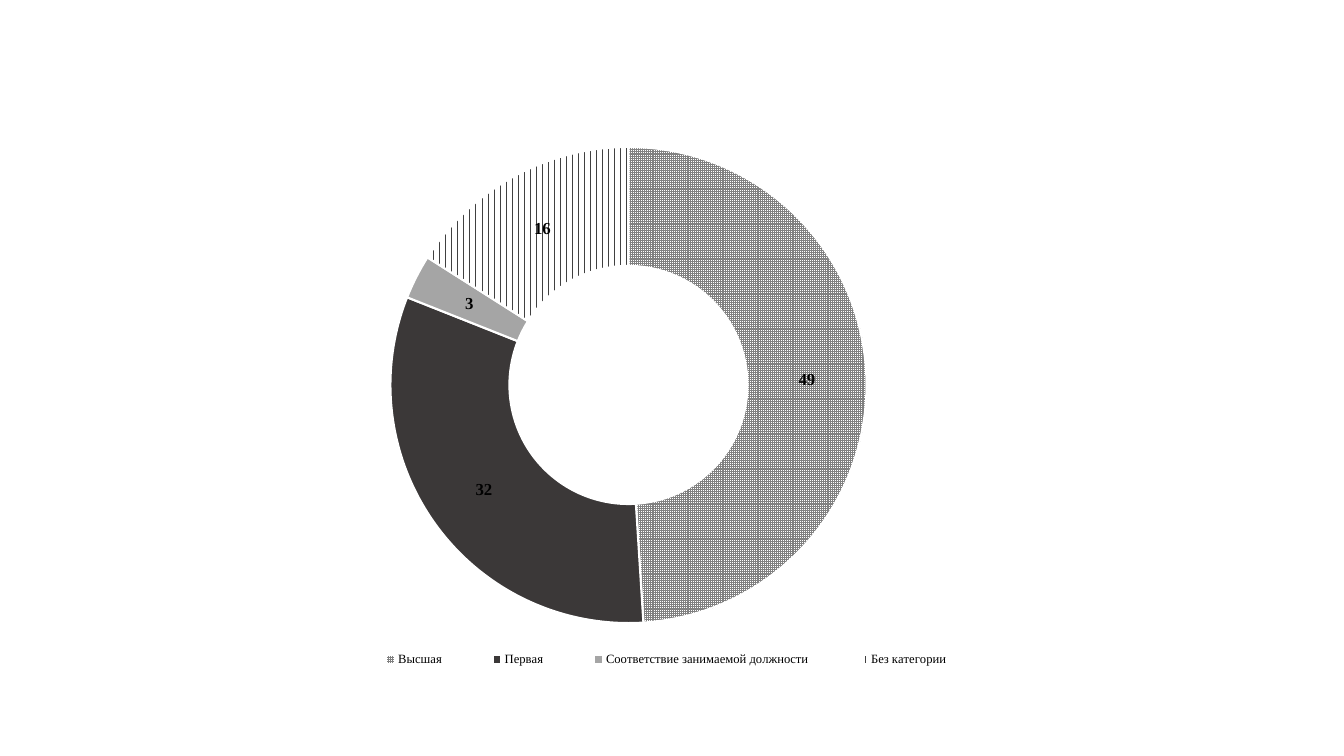
from dataclasses import dataclass
from typing import Optional

from lxml import etree
from pptx import Presentation
from pptx import util as u
from pptx.chart.data import CategoryChartData
from pptx.dml.color import RGBColor
from pptx.enum import chart as ch
from pptx.enum.dml import MSO_PATTERN
from pptx.oxml.ns import qn

COLORS = {
    "text": "000000",
    "white": "FFFFFF",
    "grid": "808080",
    "dark": "3B3838",
    "gray": "A5A5A5",
    "stripe": "404040",
}


@dataclass
class Sector:
    label: str
    value: int
    color: str
    pattern: Optional[MSO_PATTERN] = None


SECTORS = [
    Sector("Высшая", 49, "grid", MSO_PATTERN.SMALL_GRID),
    Sector("Первая", 32, "dark"),
    Sector("Соответствие занимаемой должности", 3, "gray"),
    Sector("Без категории", 16, "stripe", MSO_PATTERN.DASHED_VERTICAL),
]


def rgb(name: str) -> RGBColor:
    return RGBColor.from_string(COLORS[name])


def set_font(font, name: str, size: float, bold: bool = False) -> None:
    font.name = name
    font.size = u.Pt(size)
    font.bold = bold
    font.color.rgb = rgb("text")


def make_layout(x: float, y: float, w: float, h: float, inner: bool = False):
    """Build a manual layout in fractions of the chart area."""
    layout = etree.Element(qn("c:layout"))
    manual = etree.SubElement(layout, qn("c:manualLayout"))
    settings = [("layoutTarget", "inner")] if inner else []
    settings += [("xMode", "edge"), ("yMode", "edge"),
                 ("x", x), ("y", y), ("w", w), ("h", h)]
    for tag, value in settings:
        etree.SubElement(manual, qn(f"c:{tag}")).set("val", str(value))
    return layout


def paint_sector(point, sector: Sector) -> None:
    fill = point.format.fill
    if sector.pattern is None:
        fill.solid()
        fill.fore_color.rgb = rgb(sector.color)
    else:
        fill.patterned()
        fill.pattern = sector.pattern
        fill.fore_color.rgb = rgb(sector.color)
        fill.back_color.rgb = rgb("white")
    point.format.line.color.rgb = rgb("white")
    point.format.line.width = u.Pt(1.5)


def add_doughnut(slide) -> None:
    data = CategoryChartData()
    data.categories = [s.label for s in SECTORS]
    data.add_series("Series 1", [s.value for s in SECTORS])
    chart = slide.shapes.add_chart(
        ch.XL_CHART_TYPE.DOUGHNUT,
        u.Cm(3.78), u.Cm(2.64), u.Cm(23.88), u.Cm(15.19), data,
    ).chart
    chart.has_title = False
    set_font(chart.font, "Calibri", 10)

    # Ring
    plot = chart.plots[0]
    plot.vary_by_categories = True
    for i, sector in enumerate(SECTORS):
        paint_sector(plot.series[0].points[i], sector)
    area = chart._chartSpace.chart.plotArea
    area.find(".//" + qn("c:holeSize")).set("val", "75")
    for old in area.findall(qn("c:layout")):
        area.remove(old)
    area.insert(0, make_layout(0.2, 0.07, 0.61, 0.79, inner=True))

    # Value labels
    plot.has_data_labels = True
    labels = plot.data_labels
    labels.show_value = True
    labels.show_percentage = False
    set_font(labels.font, "Times New Roman", 12, bold=True)

    # Legend
    chart.has_legend = True
    legend = chart.legend
    legend.position = ch.XL_LEGEND_POSITION.BOTTOM
    legend.include_in_layout = False
    set_font(legend.font, "Times New Roman", 9)
    element = legend._element
    for old in element.findall(qn("c:layout")):
        element.remove(old)
    element.find(qn("c:legendPos")).addnext(make_layout(0.2, 0.89, 0.69, 0.06))


def main() -> None:
    prs = Presentation()
    prs.slide_width, prs.slide_height = u.Cm(33.87), u.Cm(19.05)
    slide = prs.slides.add_slide(prs.slide_layouts[6])
    add_doughnut(slide)
    prs.save("out.pptx")


if __name__ == "__main__":
    main()
